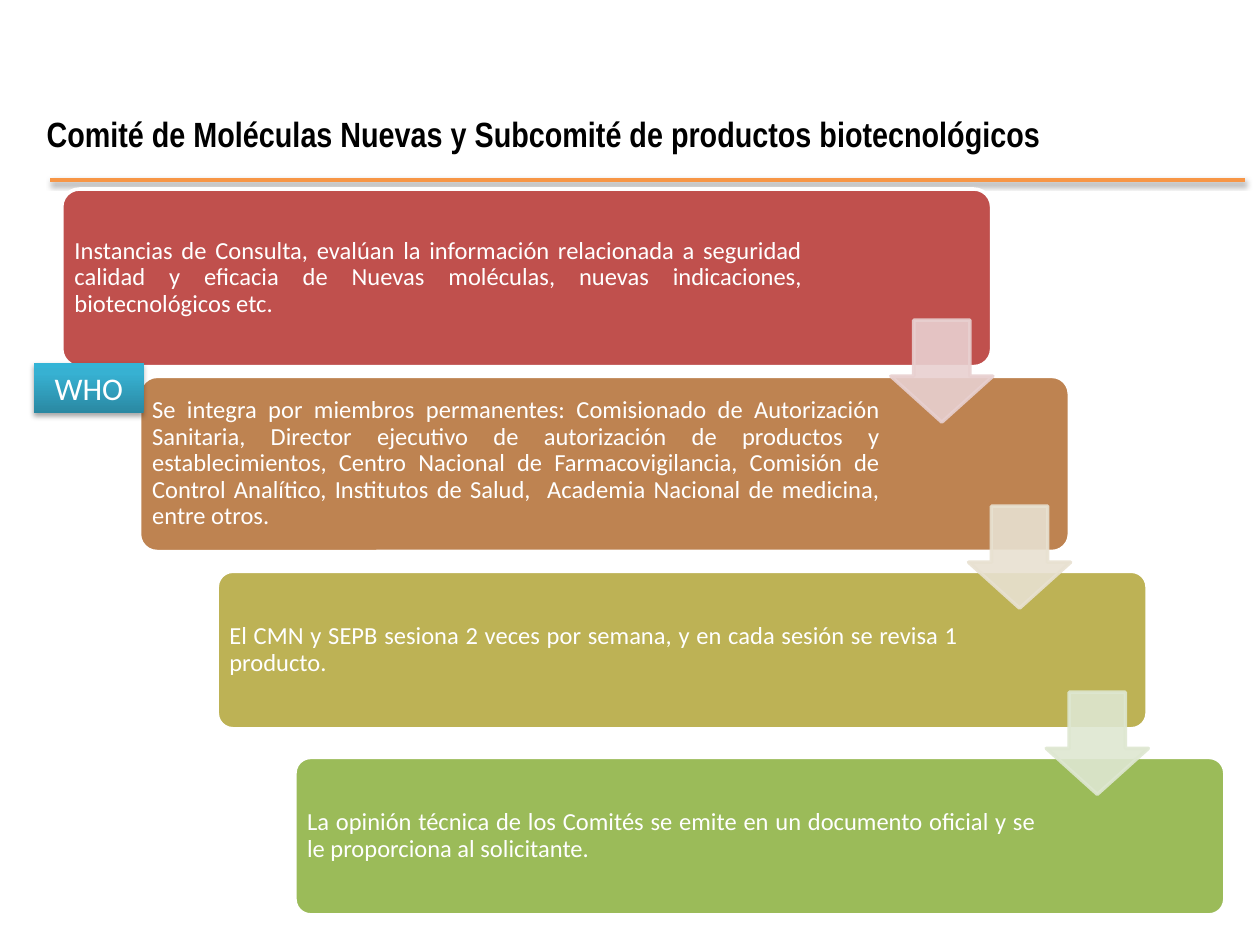
from copy import deepcopy

from lxml import etree
from pptx import Presentation
from pptx.dml.color import RGBColor
from pptx.enum.shapes import MSO_CONNECTOR, MSO_SHAPE
from pptx.enum.text import MSO_ANCHOR, MSO_AUTO_SIZE, PP_ALIGN
from pptx.oxml.ns import qn
from pptx.util import Inches, Pt

ROUNDED = MSO_SHAPE.ROUNDED_RECTANGLE
DOWN_ARROW = MSO_SHAPE.DOWN_ARROW
RECTANGLE = MSO_SHAPE.RECTANGLE
STRAIGHT = MSO_CONNECTOR.STRAIGHT
MIDDLE, TOP = MSO_ANCHOR.MIDDLE, MSO_ANCHOR.TOP
LEFT, CENTER, JUSTIFY = PP_ALIGN.LEFT, PP_ALIGN.CENTER, PP_ALIGN.JUSTIFY

BLACK = RGBColor(0x00, 0x00, 0x00)
WHITE = RGBColor(0xFF, 0xFF, 0xFF)
ORANGE = RGBColor(0xF7, 0x96, 0x46)
CARD_COLORS = [
    RGBColor(0xC0, 0x50, 0x4D),
    RGBColor(0xBE, 0x83, 0x51),
    RGBColor(0xBD, 0xB2, 0x55),
    RGBColor(0x9B, 0xBB, 0x59),
]
ARROW_COLORS = [
    RGBColor(0xE8, 0xD0, 0xD0),
    RGBColor(0xE8, 0xE1, 0xD1),
    RGBColor(0xDE, 0xE7, 0xD1),
]
TAG_STOPS = [
    (0, RGBColor(0x2A, 0x88, 0xA2)),
    (0.8, RGBColor(0x37, 0xB1, 0xD2)),
    (1, RGBColor(0x34, 0xB4, 0xD6)),
]

# Staircase grid: each step moves one column right and one row down
COLUMN, ROW = 0.617, 1.477
CARD_LEFT, CARD_WIDTH, FIRST_MIDDLE = 0.49, 7.38, 2.205
ARROW_LEFT, ARROW_TOP, ARROW_SIZE = 7.07, 2.54, 0.81

STEPS = [
    (1.41, "Instancias de Consulta, evalúan la información relacionada a seguridad "
           "calidad y eficacia de Nuevas moléculas, nuevas indicaciones, "
           "biotecnológicos etc. "),
    (1.39, "Se integra por miembros permanentes: Comisionado de Autorización "
           "Sanitaria, Director ejecutivo de autorización de productos y "
           "establecimientos, Centro Nacional de Farmacovigilancia, Comisión de "
           "Control Analítico, Institutos de Salud,  Academia Nacional de medicina, "
           "entre otros."),
    (1.25, "El CMN y SEPB sesiona 2 veces por semana, y en cada sesión se revisa 1 "
           "producto."),
    (1.25, "La opinión técnica de los Comités se emite en un documento oficial y se "
           "le proporciona al solicitante."),
]


def write(shape, text, font_name, size, color, alignment, anchor, bold=False):
    frame = shape.text_frame
    frame.text = text
    frame.word_wrap = True
    frame.vertical_anchor = anchor
    paragraph = frame.paragraphs[0]
    paragraph.alignment = alignment
    font = paragraph.runs[0].font
    font.name, font.size, font.bold = font_name, Pt(size), bold
    font.color.rgb = color


def add_shadow(properties, distance, opacity):
    effects = properties.find(qn("a:effectLst"))
    if effects is None:
        effects = etree.SubElement(properties, qn("a:effectLst"))
    shadow = etree.SubElement(effects, qn("a:outerShdw"), blurRad=str(Pt(3.1)),
                              dist=str(Pt(distance)), dir="5400000", rotWithShape="0")
    color = etree.SubElement(shadow, qn("a:srgbClr"), val=str(BLACK))
    etree.SubElement(color, qn("a:alpha"), val=str(opacity * 1000))


presentation = Presentation()
presentation.slide_width = Inches(10)
presentation.slide_height = Inches(7.5)
slide = presentation.slides.add_slide(presentation.slide_layouts[5])
shapes = slide.shapes

# Title
title = shapes.title
title.left, title.top = Inches(0.27), Inches(0.84)
title.width, title.height = Inches(8.9), Inches(0.44)
write(title, "Comité de Moléculas Nuevas y Subcomité de productos biotecnológicos",
      "Arial Narrow", 20, BLACK, LEFT, TOP, bold=True)
title.text_frame.auto_size = MSO_AUTO_SIZE.NONE

# Rule under the title
rule = shapes.add_connector(STRAIGHT, Inches(0.4), Inches(1.43), Inches(9.88), Inches(1.43))
rule.line.color.rgb = ORANGE
rule.line.width = Pt(2)
add_shadow(rule._element.spPr, 1.6, 38)

# Cards of the staircase
for step, ((height, text), color) in enumerate(zip(STEPS, CARD_COLORS)):
    top = FIRST_MIDDLE + step * ROW - height / 2
    card = shapes.add_shape(ROUNDED, Inches(CARD_LEFT + step * COLUMN), Inches(top),
                            Inches(CARD_WIDTH), Inches(height))
    card.adjustments[0] = 0.1
    card.shadow.inherit = False
    card.fill.solid()
    card.fill.fore_color.rgb = color
    card.line.color.rgb = WHITE
    card.line.width = Pt(2)
    write(card, text, "Calibri", 14, WHITE, JUSTIFY, MIDDLE)
    frame = card.text_frame
    frame.margin_left = frame.margin_top = frame.margin_bottom = Inches(0.06)
    frame.margin_right = Inches(1.46)  # keeps the text clear of the arrows
    frame.paragraphs[0].line_spacing = 0.9

# Translucent arrows between the cards
for step, color in enumerate(ARROW_COLORS):
    arrow = shapes.add_shape(DOWN_ARROW, Inches(ARROW_LEFT + step * COLUMN),
                             Inches(ARROW_TOP + step * ROW),
                             Inches(ARROW_SIZE), Inches(ARROW_SIZE))
    arrow.adjustments[0], arrow.adjustments[1] = 0.55, 0.45
    arrow.shadow.inherit = False
    arrow.fill.solid()
    arrow.fill.fore_color.rgb = color
    arrow.line.color.rgb = color
    arrow.line.width = Pt(2)
    for color_element in arrow._element.spPr.iter(qn("a:srgbClr")):
        etree.SubElement(color_element, qn("a:alpha"), val="90000")

# Tag beside the second card
tag = shapes.add_shape(RECTANGLE, Inches(0.27), Inches(2.88), Inches(0.87), Inches(0.4))
tag.fill.gradient()
tag.fill.gradient_angle = 90
stop_list = tag._element.spPr.find(".//" + qn("a:gsLst"))
stop_list.append(deepcopy(stop_list[-1]))
for stop, (position, color) in zip(tag.fill.gradient_stops, TAG_STOPS):
    stop.position = position
    stop.color.rgb = color
tag.line.fill.background()
tag.shadow.inherit = False
add_shadow(tag._element.spPr, 1.8, 35)
write(tag, "WHO", "Calibri", 18, WHITE, CENTER, TOP)

presentation.save("out.pptx")
